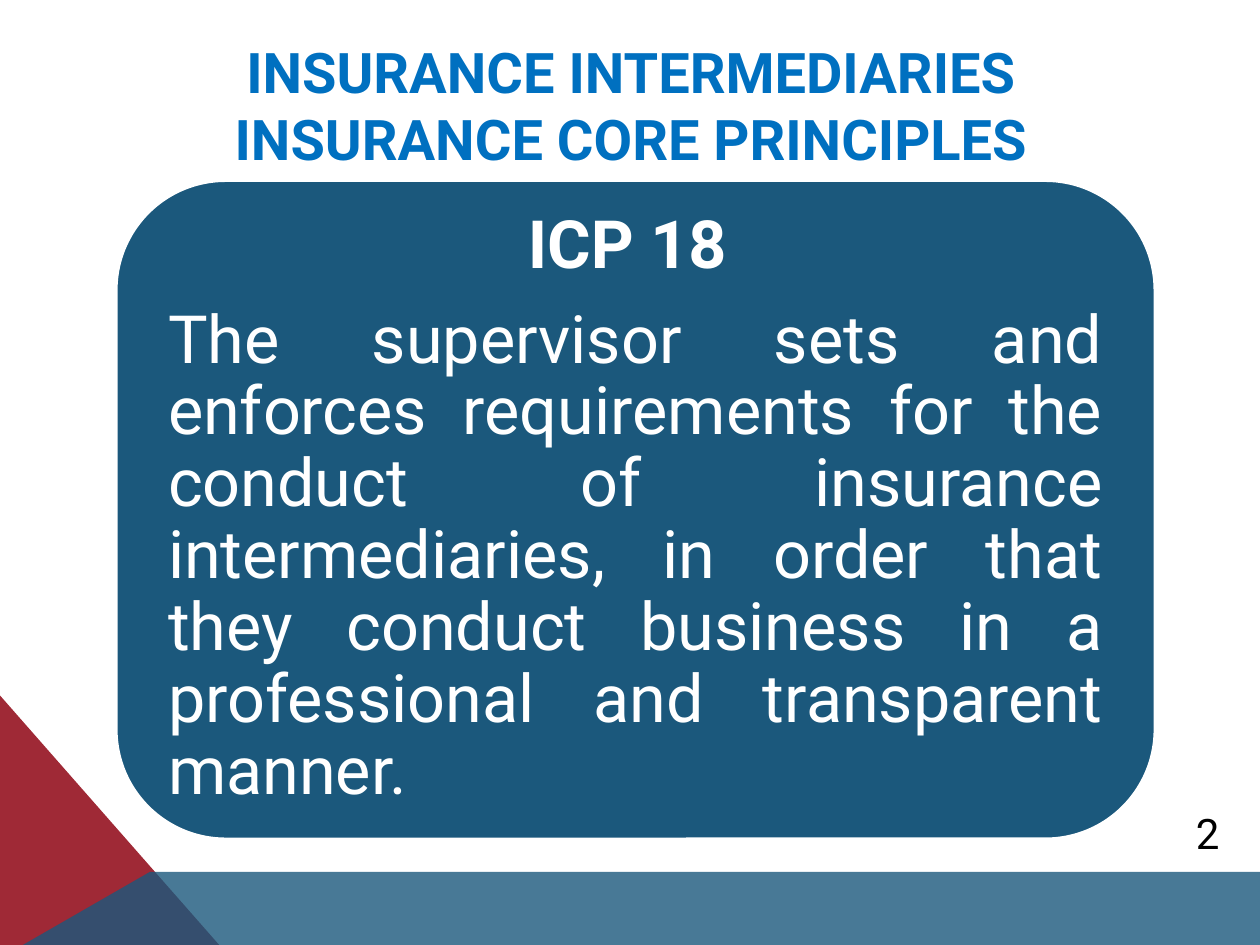
from dataclasses import dataclass

from lxml.etree import SubElement
from pptx import Presentation
from pptx.dml.color import RGBColor
from pptx.enum.shapes import MSO_SHAPE
from pptx.enum.text import MSO_ANCHOR, PP_ALIGN
from pptx.oxml.ns import qn
from pptx.util import Pt


@dataclass(frozen=True)
class Theme:
    font: str = "Roboto"
    blue: RGBColor = RGBColor(0x1B, 0x58, 0x7C)
    red: RGBColor = RGBColor(0x9F, 0x29, 0x36)
    title_blue: RGBColor = RGBColor(0x00, 0x70, 0xC0)
    white: RGBColor = RGBColor(0xFF, 0xFF, 0xFF)
    black: RGBColor = RGBColor(0x00, 0x00, 0x00)
    title_size: int = 32
    panel_size: int = 38
    number_size: int = 24


THEME = Theme()
SLIDE_WIDTH, SLIDE_HEIGHT = 720, 540


def points(values):
    return [Pt(value) for value in values]


def prepare_frame(shape, inset_x, inset_y):
    """Wrap and vertically centre the text of a shape, and return its frame."""
    frame = shape.text_frame
    frame.word_wrap = True
    frame.vertical_anchor = MSO_ANCHOR.MIDDLE
    frame.margin_left = frame.margin_right = Pt(inset_x)
    frame.margin_top = frame.margin_bottom = Pt(inset_y)
    return frame


def add_text(paragraph, text, size, color, bold=False):
    run = paragraph.add_run()
    run.text = text
    run.font.name = THEME.font
    run.font.size = Pt(size)
    run.font.color.rgb = color
    run.font.bold = bold


def add_polygon(slide, corners, color):
    start, *others = [points(corner) for corner in corners]
    builder = slide.shapes.build_freeform(*start, scale=1.0)
    builder.add_line_segments(others, close=True)
    shape = builder.convert_to_shape()
    shape.shadow.inherit = False
    shape.fill.solid()
    shape.fill.fore_color.rgb = color
    shape.line.fill.background()
    return shape


def add_footer(slide, box):
    """Red corner triangle, overlapped by a translucent slanted band."""
    left, top, width, height = box
    right, bottom = left + width, top + height
    band_top = bottom - 41.8
    add_polygon(slide, [(left, top), (left + 125.3, bottom), (left, bottom)], THEME.red)
    band = add_polygon(
        slide,
        [(left + 13, bottom), (left + 85.7, band_top), (right, band_top), (right, bottom)],
        THEME.blue,
    )
    color = band.fill._xPr.find(qn("a:solidFill"))[0]
    SubElement(color, qn("a:alpha"), val="80000")


def add_title(slide, box, lines):
    frame = prepare_frame(slide.shapes.add_textbox(*points(box)), 7.2, 3.6)
    paragraph = frame.paragraphs[0]
    paragraph.alignment = PP_ALIGN.CENTER
    for index, line in enumerate(lines):
        if index:
            paragraph.add_line_break()
        add_text(paragraph, line, THEME.title_size, THEME.title_blue, bold=True)


def add_page_number(slide, box, number):
    shape = slide.shapes.add_shape(MSO_SHAPE.OVAL, *points(box))
    shape.shadow.inherit = False
    shape.fill.background()
    shape.line.fill.background()
    paragraph = prepare_frame(shape, 0.72, 0.72).paragraphs[0]
    paragraph.alignment = PP_ALIGN.CENTER
    add_text(paragraph, number, THEME.number_size, THEME.black)


def add_principle(slide, box, heading, statement):
    """Rounded panel with a centred heading above a justified statement."""
    left, top, width, height = box
    group = slide.shapes.add_group_shape()
    panel = group.shapes.add_shape(MSO_SHAPE.ROUNDED_RECTANGLE, *points(box))
    panel.shadow.inherit = False
    panel.fill.solid()
    panel.fill.fore_color.rgb = THEME.blue
    panel.line.color.rgb = THEME.white
    panel.line.width = Pt(2)

    margin = 18.4
    text_box = (left + margin, top + margin, width - 2 * margin, height - 2 * margin)
    frame = prepare_frame(group.shapes.add_textbox(*points(text_box)), 11.4, 11.4)
    contents = [
        (heading, PP_ALIGN.CENTER, True),
        (statement, PP_ALIGN.JUSTIFY, False),
    ]
    for index, (text, alignment, bold) in enumerate(contents):
        paragraph = frame.add_paragraph() if index else frame.paragraphs[0]
        paragraph.alignment = alignment
        paragraph.line_spacing = 0.9
        paragraph.space_after = Pt(13)
        add_text(paragraph, text, THEME.panel_size, THEME.white, bold)


def main():
    presentation = Presentation()
    presentation.slide_width = Pt(SLIDE_WIDTH)
    presentation.slide_height = Pt(SLIDE_HEIGHT)
    slide = presentation.slides.add_slide(presentation.slide_layouts[6])

    add_footer(slide, (0, 397.4, SLIDE_WIDTH, SLIDE_HEIGHT - 397.4))
    add_title(
        slide,
        (64.8, 23.8, 591.8, 72),
        ["INSURANCE INTERMEDIARIES", "INSURANCE CORE PRINCIPLES"],
    )
    add_page_number(slide, (666, 455.8, 48.2, 39.6), "2")
    add_principle(
        slide,
        (66.2, 103, 594, 376.6),
        "ICP 18 ",
        "The supervisor sets and enforces requirements for the conduct of "
        "insurance intermediaries, in order that they conduct business in a "
        "professional and transparent manner.",
    )
    presentation.save("out.pptx")


if __name__ == "__main__":
    main()
